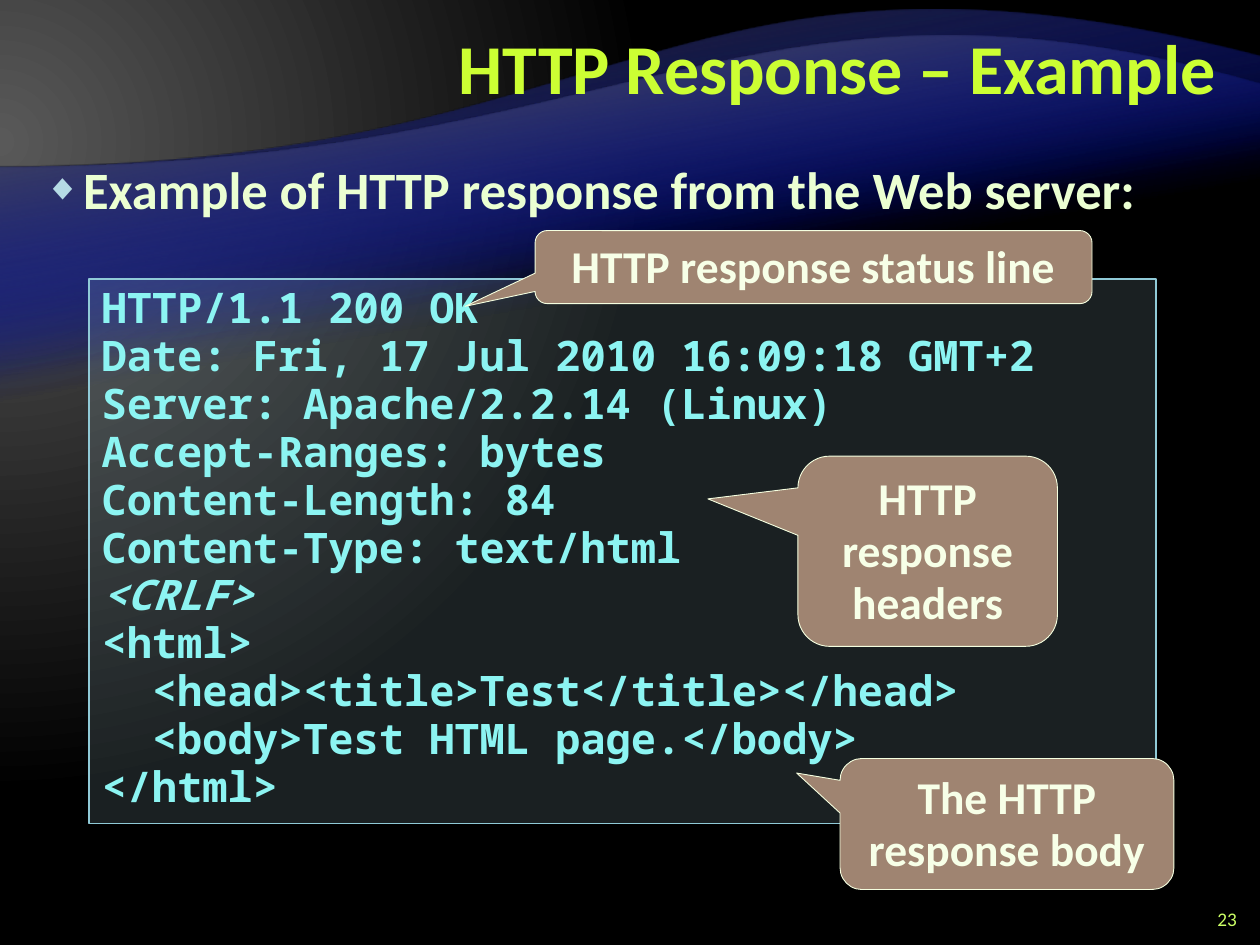
from lxml import etree
from pptx import Presentation
from pptx.dml.color import RGBColor
from pptx.enum.shapes import MSO_SHAPE
from pptx.enum.text import MSO_ANCHOR, MSO_AUTO_SIZE, PP_ALIGN
from pptx.oxml.ns import qn
from pptx.util import Inches, Pt

RECTANGLE = MSO_SHAPE.RECTANGLE
CALLOUT = MSO_SHAPE.ROUNDED_RECTANGULAR_CALLOUT
TOP, MIDDLE = MSO_ANCHOR.TOP, MSO_ANCHOR.MIDDLE
FIT_SHAPE, NO_FIT = MSO_AUTO_SIZE.SHAPE_TO_FIT_TEXT, MSO_AUTO_SIZE.NONE
LEFT, CENTER, RIGHT = PP_ALIGN.LEFT, PP_ALIGN.CENTER, PP_ALIGN.RIGHT

WIDTH, HEIGHT = Inches(10), Inches(7.5)
TITLE_LAYOUT = 1


def color(value):
    return RGBColor.from_string(value)


# Text formats: font values, colour, then paragraph values
TITLE = ({"name": "Calibri", "size": Pt(40), "bold": True}, "CCFF33",
         {"alignment": RIGHT, "line_spacing": Pt(40)})
BODY = ({"name": "Calibri", "size": Pt(30), "bold": True}, "EBFFD2",
        {"alignment": LEFT, "line_spacing": Pt(38), "space_before": Pt(0),
         "space_after": Pt(6)})
NUMBER = ({"name": "Calibri", "size": Pt(11)}, "CCFF66", {"alignment": RIGHT})
CODE = ({"name": "Noto Sans Mono", "size": Pt(24), "bold": True}, "8CF4F2",
        {"alignment": LEFT, "line_spacing": 0.95})
NOTE = ({"name": "Calibri", "size": Pt(26), "bold": True}, "F7FFE7",
        {"alignment": CENTER, "line_spacing": Pt(30)})

RESPONSE = """HTTP/1.1 200 OK
Date: Fri, 17 Jul 2010 16:09:18 GMT+2
Server: Apache/2.2.14 (Linux)
Accept-Ranges: bytes
Content-Length: 84
Content-Type: text/html
<CRLF>
<html>
  <head><title>Test</title></head>
  <body>Test HTML page.</body>
</html>"""
ITALIC_LINE = "<CRLF>"

# Boxes are left, top, width, height in percent of the slide
CALLOUTS = [
    ("HTTP response status line", (42.47, 24.4, 44.2, 7.73), (-0.626, 0.538)),
    ("HTTP response headers", (63.33, 48.27, 20.6, 20.13), (-0.847, -0.275)),
    ("The HTTP response body", (66.67, 80.27, 26.5, 13.87), (-0.63, -0.389)),
]

# Flat edge, Bezier points of the curved edge, colour at the curve;
# each wave is then turned by 180 degrees
WAVES = [
    (6, [(100, 75.34), (50, 75.34), (46.6, 103.07), (0, 87.07)], "262626"),
    (8.93, [(100, 65.47), (50, 65.47), (40.2, 89.73), (0, 74.27)], "595959"),
]


def point(x, y):
    return round(WIDTH * x / 100), round(HEIGHT * y / 100)


def box(left, top, width, height):
    return point(left, top) + point(width, height)


def add_element(parent, tag, **attributes):
    return etree.SubElement(parent, qn(tag), attributes)


def set_values(target, values):
    for name, value in values.items():
        setattr(target, name, value)


def set_gradient(owner, element, stops):
    """Give a shape or background a gradient and return its XML element."""
    owner.fill.background()
    empty = element.find(".//" + qn("a:noFill"))
    gradient = etree.Element(qn("a:gradFill"), rotWithShape="1")
    stop_list = add_element(gradient, "a:gsLst")
    for position, value, opacity in stops:
        stop = add_element(stop_list, "a:gs", pos=str(position * 1000))
        rgb = add_element(stop, "a:srgbClr", val=value)
        if opacity < 100:
            add_element(rgb, "a:alpha", val=str(opacity * 1000))
    empty.getparent().replace(empty, gradient)
    return gradient


def add_background(slide):
    gradient = set_gradient(slide.background, slide.element,
                            [(0, "595959", 100), (83, "000000", 100)])
    shade = add_element(gradient, "a:path", path="circle")
    add_element(shade, "a:fillToRect", l="20000", t="30000", r="135000", b="100000")


def bend_edge(wave, edge, controls):
    """Turn one straight edge of the outline into a Bezier curve."""
    line = wave.element.findall(".//" + qn("a:lnTo"))[edge]
    curve = etree.Element(qn("a:cubicBezTo"))
    for control in controls:
        x, y = point(*control)
        add_element(curve, "a:pt", x=str(x - wave.left), y=str(y - wave.top))
    line.getparent().replace(line, curve)


def add_wave(slide, flat, controls, edge_color, depth):
    start, *bends, end = controls
    builder = slide.shapes.build_freeform(*point(100, flat), scale=1.0)
    builder.add_line_segments([point(*start), point(*end), point(0, flat)])
    wave = builder.convert_to_shape()
    bend_edge(wave, 1, [*bends, end])
    wave.rotation = 180
    wave.shadow.inherit = False
    gradient = set_gradient(wave, wave.element,
                            [(65, "000D9E", 0), (100, edge_color, 100)])
    add_element(gradient, "a:lin", ang=str(80 * 60000), scaled="0")
    wave.line.fill.background()
    slide.shapes.element.insert(depth, wave.element)


def write(shape, lines, text_format, anchor=TOP, fit=NO_FIT, bullet=False):
    font_values, font_color, paragraph_values = text_format
    frame = shape.text_frame
    set_values(frame, {"text": "\n".join(lines), "word_wrap": True,
                       "vertical_anchor": anchor, "auto_size": fit})
    for paragraph in frame.paragraphs:
        if bullet:
            add_bullet(paragraph)
        set_values(paragraph, paragraph_values)
        for run in paragraph.runs:
            set_values(run.font, font_values)
            run.font.color.rgb = color(font_color)


def place(shape, area):
    set_values(shape, dict(zip(("left", "top", "width", "height"), box(*area))))


def add_bullet(paragraph):
    indent = Inches(0.31)
    properties = paragraph._p.get_or_add_pPr()
    properties.set("marL", str(indent))
    properties.set("indent", str(-indent))
    bullet_color = add_element(properties, "a:buClr")
    add_element(bullet_color, "a:srgbClr", val="B5DBE5")
    add_element(properties, "a:buSzPct", val="70000")
    add_element(properties, "a:buChar", char="◆")
    tabs = add_element(properties, "a:tabLst")
    add_element(tabs, "a:tab", pos=str(indent), algn="l")


def add_panel(slide, kind, area, fill, line, line_width):
    panel = slide.shapes.add_shape(kind, *box(*area))
    panel.shadow.inherit = False
    panel.fill.solid()
    panel.fill.fore_color.rgb = color(fill)
    panel.line.color.rgb = color(line)
    panel.line.width = Pt(line_width)
    return panel


def add_code(slide):
    panel = add_panel(slide, RECTANGLE, (7.08, 29.55, 84.7, 57.6), "B5DBE5", "90CAD7", 1)
    fill_color = panel.element.spPr.find(qn("a:solidFill"))[0]
    add_element(fill_color, "a:alpha", val="15000")
    write(panel, RESPONSE.split("\n"), CODE, fit=FIT_SHAPE)
    for paragraph in panel.text_frame.paragraphs:
        if paragraph.text == ITALIC_LINE:
            paragraph.runs[0].font.italic = True


def add_callout(slide, text, area, tip):
    callout = add_panel(slide, CALLOUT, area, "9F8471", "F5FFE0", 0.5)
    for index, value in enumerate((*tip, 0.167)):
        callout.adjustments[index] = value
    write(callout, [text], NOTE, fit=FIT_SHAPE)


def main():
    presentation = Presentation()
    set_values(presentation, {"slide_width": WIDTH, "slide_height": HEIGHT})
    slide = presentation.slides.add_slide(presentation.slide_layouts[TITLE_LAYOUT])

    # Backdrop: two waves, laid twice, behind the placeholders
    add_background(slide)
    for index, wave in enumerate(WAVES * 2):
        add_wave(slide, *wave, depth=2 + index)

    # Title, list and slide number
    title, body = slide.shapes.title, slide.placeholders[1]
    place(title, (20, 1.07, 77.5, 13.33))
    write(title, ["HTTP Response – Example"], TITLE, MIDDLE)
    place(body, (2.5, 15.6, 95, 8.93))
    write(body, ["Example of HTTP response from the Web server:"], BODY, bullet=True)
    number = slide.shapes.add_textbox(*box(94.17, 95.6, 5, 3.33))
    write(number, ["23"], NUMBER, MIDDLE)

    # Response listing and its explanations
    add_code(slide)
    for callout in CALLOUTS:
        add_callout(slide, *callout)

    presentation.save("out.pptx")


if __name__ == "__main__":
    main()
